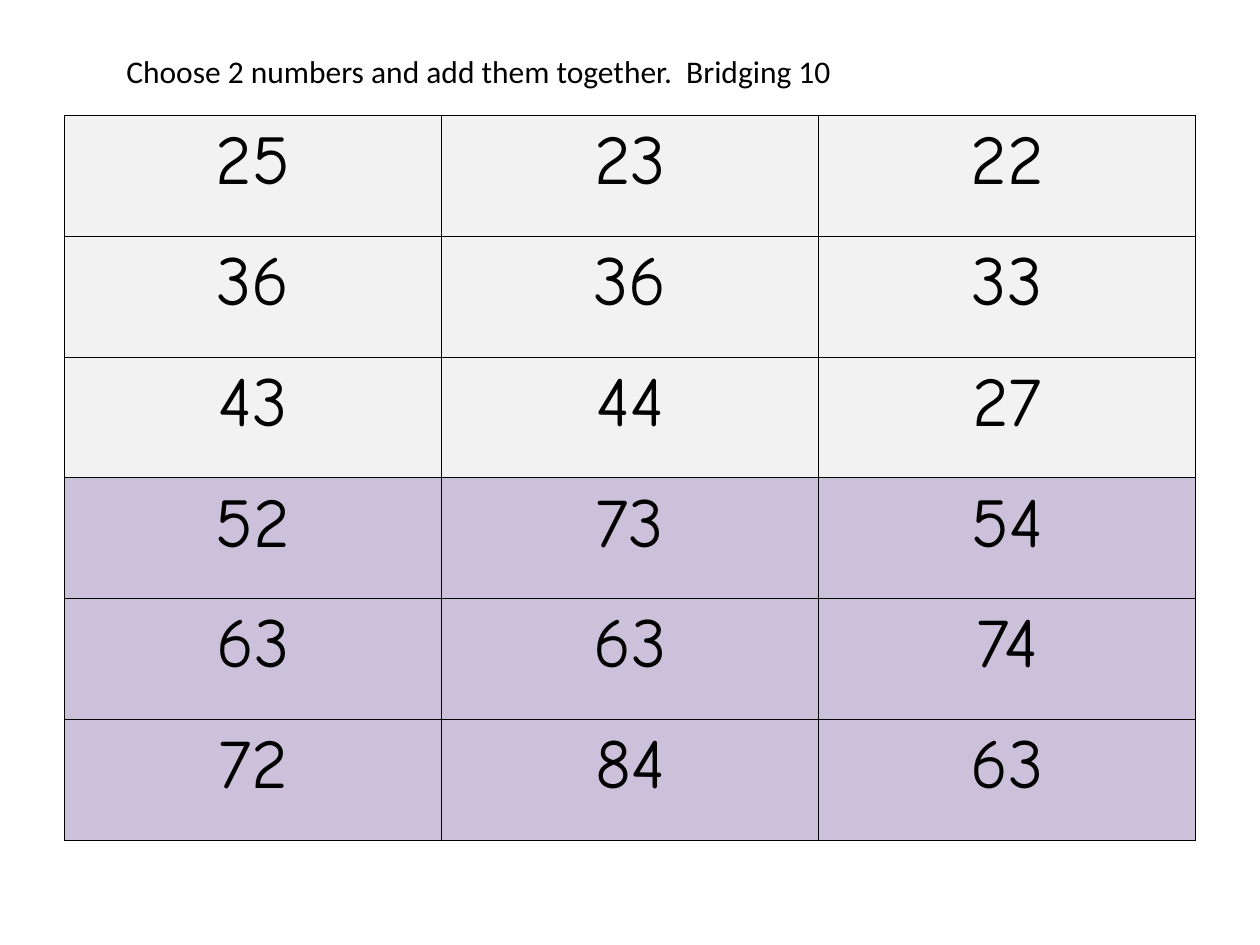
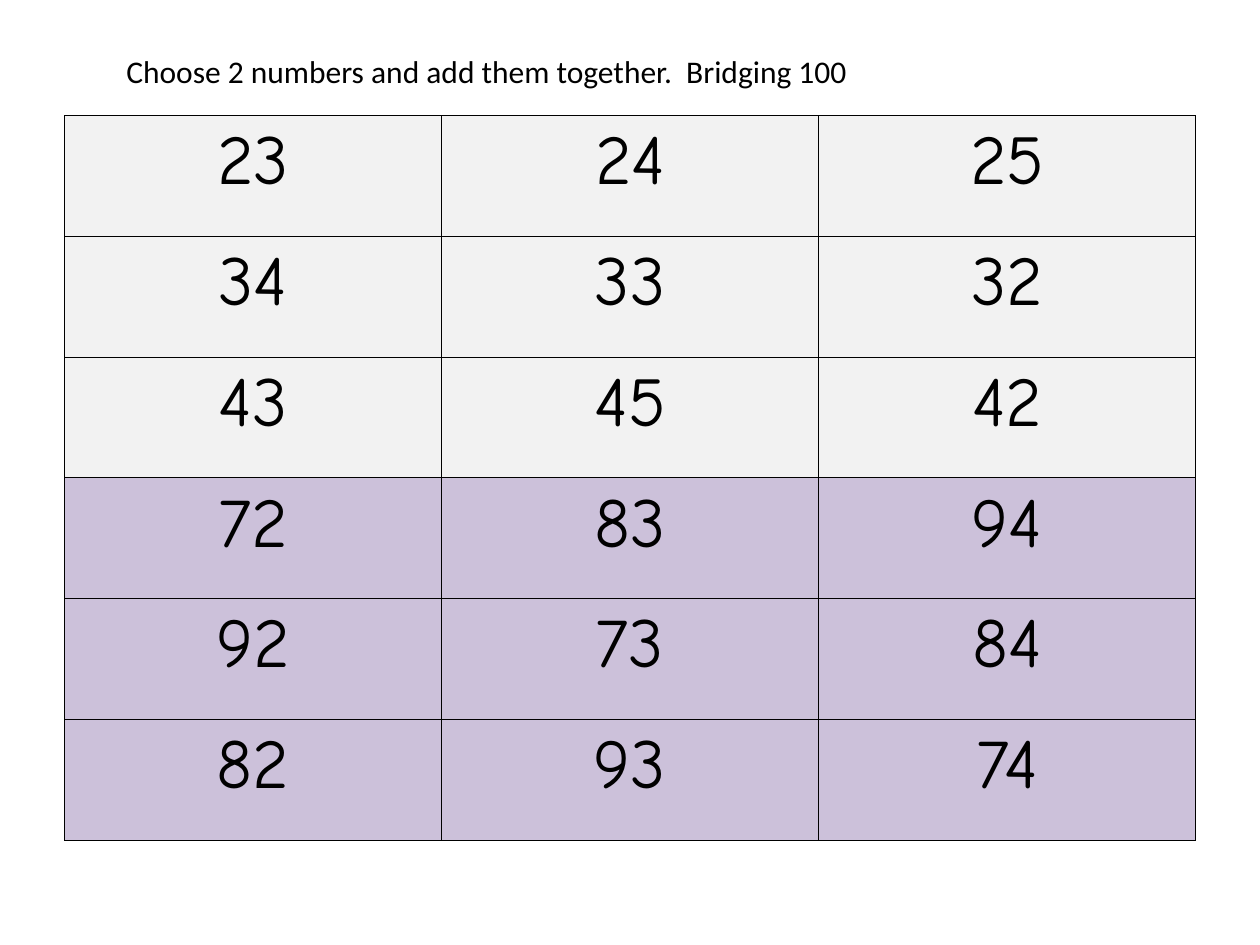
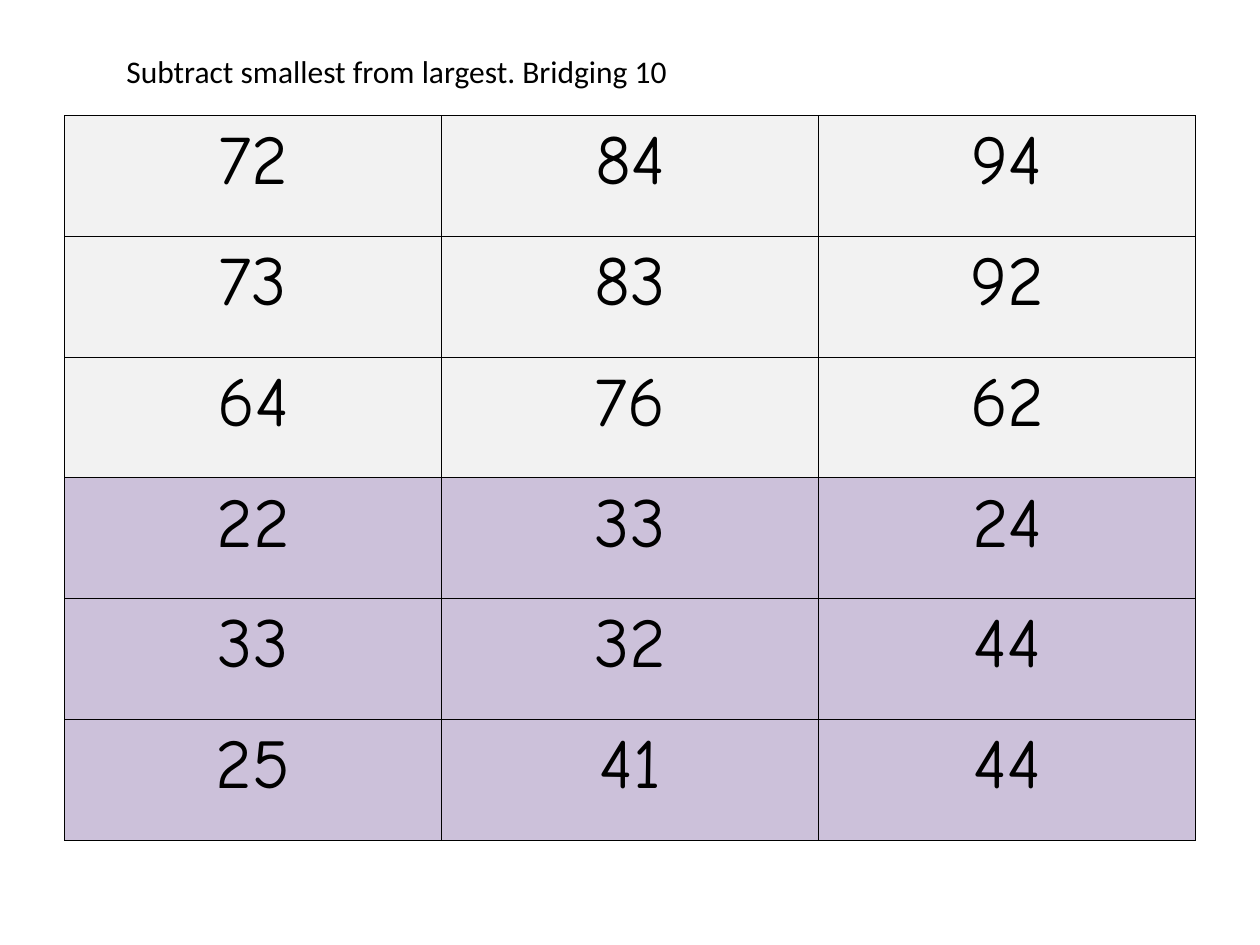
from lxml.etree import SubElement
from pptx import Presentation
from pptx.dml.color import RGBColor
from pptx.enum.text import MSO_ANCHOR as Anchor, MSO_AUTO_SIZE as AutoSize, PP_ALIGN as Align
from pptx.oxml.ns import qn
from pptx.util import Pt

# Content: a title and six rows of numbers per slide
SLIDES = [
    ("Choose 2 numbers and add them together.  Bridging 10",
     [(25, 23, 22), (36, 36, 33), (43, 44, 27),
      (52, 73, 54), (63, 63, 74), (72, 84, 63)]),
    ("Choose 2 numbers and add them together.  Bridging 100",
     [(23, 24, 25), (34, 33, 32), (43, 45, 42),
      (72, 83, 94), (92, 73, 84), (82, 93, 74)]),
    ("Subtract smallest from largest. Bridging 10",
     [(72, 84, 94), (73, 83, 92), (64, 76, 62),
      (22, 33, 24), (33, 32, 44), (25, 41, 44)]),
]

# Shared style, lengths in points
BLACK, GREY, LILAC = "000000", "F2F2F2", "CCC1DA"
TITLE_FONT, NUMBER_FONT = "Calibri", "Comic Neue"
TITLE_BOX = (65, 26, 580, 29)
GRID_LEFT, GRID_TOP = 36.85, 66
COL_W, ROW_H = 215.5, 69
BORDER = 0.5


def rgb(color):
    return RGBColor.from_string(color)


def add_run(p, text, font, size, align):
    p.alignment = align
    r = p.add_run()
    r.text = text
    r.font.name, r.font.size = font, Pt(size)
    r.font.color.rgb = rgb(BLACK)


def add_borders(cell):
    tc_pr = cell._tc.get_or_add_tcPr()
    for side in ("a:lnL", "a:lnR", "a:lnT", "a:lnB"):
        ln = SubElement(tc_pr, qn(side), w=str(Pt(BORDER)))
        fill = SubElement(ln, qn("a:solidFill"))
        SubElement(fill, qn("a:srgbClr"), val=BLACK)


def set_title(s, text):
    sp = s.shapes.title
    sp.left, sp.top, sp.width, sp.height = map(Pt, TITLE_BOX)
    tf = sp.text_frame
    tf.word_wrap = False
    tf.auto_size = AutoSize.NONE
    tf.vertical_anchor = Anchor.TOP
    add_run(tf.paragraphs[0], text, TITLE_FONT, 18, Align.LEFT)


def add_number_grid(s, rows):
    n_rows, n_cols = len(rows), len(rows[0])
    table = s.shapes.add_table(n_rows, n_cols, Pt(GRID_LEFT), Pt(GRID_TOP),
                               Pt(COL_W * n_cols), Pt(ROW_H * n_rows)).table
    table.first_row = table.horz_banding = False
    for i, numbers in enumerate(rows):
        # The upper half is grey, the lower half lilac
        color = GREY if i < n_rows // 2 else LILAC
        for j, number in enumerate(numbers):
            cell = table.cell(i, j)
            add_borders(cell)
            cell.fill.solid()
            cell.fill.fore_color.rgb = rgb(color)
            add_run(cell.text_frame.paragraphs[0], str(number), NUMBER_FONT, 40, Align.CENTER)


def main():
    prs = Presentation()
    prs.slide_width, prs.slide_height = Pt(720), Pt(540)
    title_only = prs.slide_layouts.get_by_name("Title Only")
    for title, rows in SLIDES:
        s = prs.slides.add_slide(title_only)
        set_title(s, title)
        add_number_grid(s, rows)
    prs.save("out.pptx")


if __name__ == "__main__":
    main()
